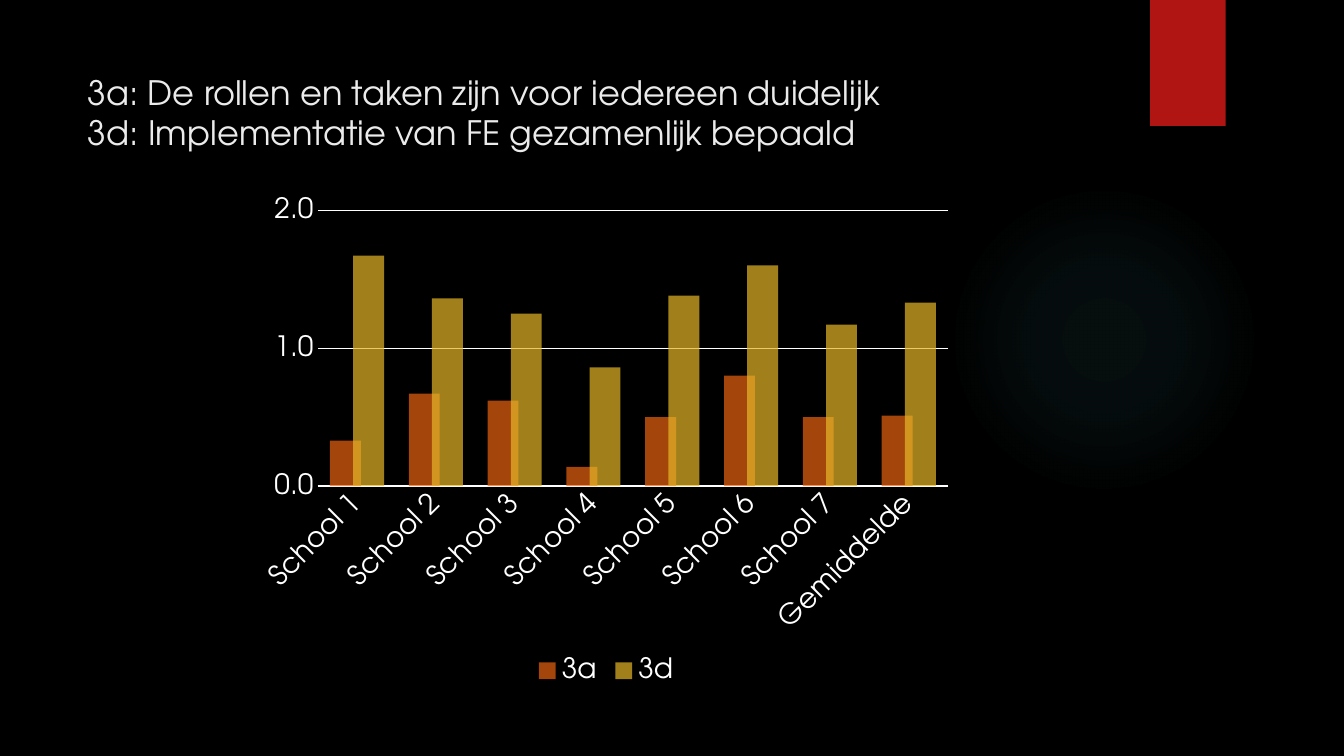
from pptx import Presentation
from pptx.chart.data import CategoryChartData
from pptx.dml.color import RGBColor
from pptx.enum.chart import XL_CHART_TYPE, XL_LEGEND_POSITION, XL_TICK_MARK
from pptx.enum.shapes import MSO_SHAPE
from pptx.enum.text import MSO_ANCHOR, MSO_AUTO_SIZE, PP_ALIGN
from pptx.oxml import parse_xml
from pptx.oxml.ns import nsdecls, qn
from pptx.util import Pt

COLUMNS = XL_CHART_TYPE.COLUMN_CLUSTERED
LEGEND_BOTTOM = XL_LEGEND_POSITION.BOTTOM
NO_TICK = XL_TICK_MARK.NONE
OVAL, RECTANGLE = MSO_SHAPE.OVAL, MSO_SHAPE.RECTANGLE

BLACK = RGBColor(0x00, 0x00, 0x00)
WHITE = RGBColor(0xFF, 0xFF, 0xFF)
TITLE_GREY = RGBColor(0xEB, 0xEB, 0xEB)
RED = RGBColor(0xB0, 0x15, 0x13)
GLOW = RGBColor(0x50, 0xB9, 0xC1)
ORANGE = RGBColor(0xEA, 0x63, 0x12)
GOLD = RGBColor(0xE6, 0xB7, 0x29)
FONT = "TeX Gyre Adventor"

# Content
TITLE_LINES = [
    "3a: De rollen en taken zijn voor iedereen duidelijk",
    "3d: Implementatie van FE gezamenlijk bepaald",
]
CATEGORIES = [f"School {number}" for number in range(1, 8)] + ["Gemiddelde"]
SERIES = [
    ("3a", ORANGE, [0.33, 0.67, 0.62, 0.14, 0.5, 0.8, 0.5, 0.51]),
    ("3d", GOLD, [1.67, 1.36, 1.25, 0.86, 1.38, 1.6, 1.17, 1.33]),
]
GLOW_STOPS = [(0, 7), (36, 6), (69, 0)]  # position, opacity in percent
PLOT_AREA = {"x": 0.095, "y": 0.045, "w": 0.885, "h": 0.55}  # share of the chart


def style_font(font, size, color):
    font.name = FONT
    font.size = Pt(size)
    font.color.rgb = color


def add_plain_shape(page, kind, left, top, width, height, color):
    shape = page.shapes.add_shape(kind, Pt(left), Pt(top), Pt(width), Pt(height))
    shape.shadow.inherit = False
    shape.fill.solid()
    shape.fill.fore_color.rgb = color
    shape.line.fill.background()
    return shape


deck = Presentation()
deck.slide_width, deck.slide_height = Pt(960), Pt(540)
page = deck.slides.add_slide(deck.slide_layouts[5])
page.background.fill.solid()
page.background.fill.fore_color.rgb = BLACK

# Soft radial glow and red tab
glow = add_plain_shape(page, OVAL, 677.5, 131.75, 221.75, 221.75, GLOW)
stops = "".join(
    f'<a:gs pos="{position * 1000}"><a:srgbClr val="{GLOW}">'
    f'<a:alpha val="{opacity * 1000}"/></a:srgbClr></a:gs>'
    for position, opacity in GLOW_STOPS
)
gradient = parse_xml(
    f'<a:gradFill {nsdecls("a")}><a:gsLst>{stops}</a:gsLst><a:path path="circle">'
    '<a:fillToRect l="50000" t="50000" r="50000" b="50000"/></a:path></a:gradFill>'
)
properties = glow.element.spPr
properties.replace(properties.find(qn("a:solidFill")), gradient)
add_plain_shape(page, RECTANGLE, 821.5, 0, 54, 90, RED)

# Title
title = page.shapes.title
title.left, title.top, title.width, title.height = Pt(55.5), Pt(47.5), Pt(589), Pt(94.5)
frame = title.text_frame
frame.word_wrap = False
frame.auto_size = MSO_AUTO_SIZE.NONE
frame.vertical_anchor = MSO_ANCHOR.TOP
para = frame.paragraphs[0]
para.alignment = PP_ALIGN.LEFT
for index, line in enumerate(TITLE_LINES):
    if index:
        para.add_line_break()
    span = para.add_run()
    span.text = line
    style_font(span.font, 24, TITLE_GREY)

# Chart
chart_data = CategoryChartData(number_format="0.00")
chart_data.categories = CATEGORIES
for name, color, values in SERIES:
    chart_data.add_series(name, values)
chart = page.shapes.add_chart(
    COLUMNS, Pt(178.5), Pt(134), Pt(509), Pt(358.5), chart_data
).chart
style_font(chart.font, 10, WHITE)
chart.has_title = False
chart.has_legend = True
chart.legend.position = LEGEND_BOTTOM
chart.legend.include_in_layout = False
style_font(chart.legend.font, 20, WHITE)

plot = chart.plots[0]
plot.gap_width, plot.overlap = 80, 25
plot.vary_by_categories = False
for series, (name, color, values) in zip(plot.series, SERIES):
    series.format.fill.solid()
    series.format.fill.fore_color.rgb = color
    tint = series.format.fill._xPr.find(".//" + qn("a:srgbClr"))
    tint.append(parse_xml(f'<a:alpha {nsdecls("a")} val="70000"/>'))

# Axes
for axis in (chart.category_axis, chart.value_axis):
    axis.major_tick_mark = axis.minor_tick_mark = NO_TICK
    style_font(axis.tick_labels.font, 20, WHITE)

school_axis = chart.category_axis
school_axis.format.line.color.rgb = WHITE
school_axis.format.line.width = Pt(1.25)
label_body = school_axis._element.find(qn("c:txPr")).find(qn("a:bodyPr"))
label_body.set("rot", "-2700000")
label_body.set("vert", "horz")

score_axis = chart.value_axis
score_axis.minimum_scale, score_axis.maximum_scale, score_axis.major_unit = 0, 2, 1
score_axis.tick_labels.number_format = "0.0"
score_axis.tick_labels.number_format_is_linked = False
score_axis.format.line.fill.background()
score_axis.major_gridlines.format.line.color.rgb = WHITE
score_axis.major_gridlines.format.line.width = Pt(0.75)

# Fixed plot area inside the chart
plot_area = chart._chartSpace.chart.plotArea
for layout in plot_area.findall(qn("c:layout")):
    plot_area.remove(layout)
modes = '<c:xMode val="edge"/><c:yMode val="edge"/>'
sizes = "".join(f'<c:{key} val="{share}"/>' for key, share in PLOT_AREA.items())
plot_area.insert(0, parse_xml(
    f'<c:layout {nsdecls("c")}><c:manualLayout><c:layoutTarget val="inner"/>'
    f"{modes}{sizes}</c:manualLayout></c:layout>"
))

deck.save("out.pptx")
